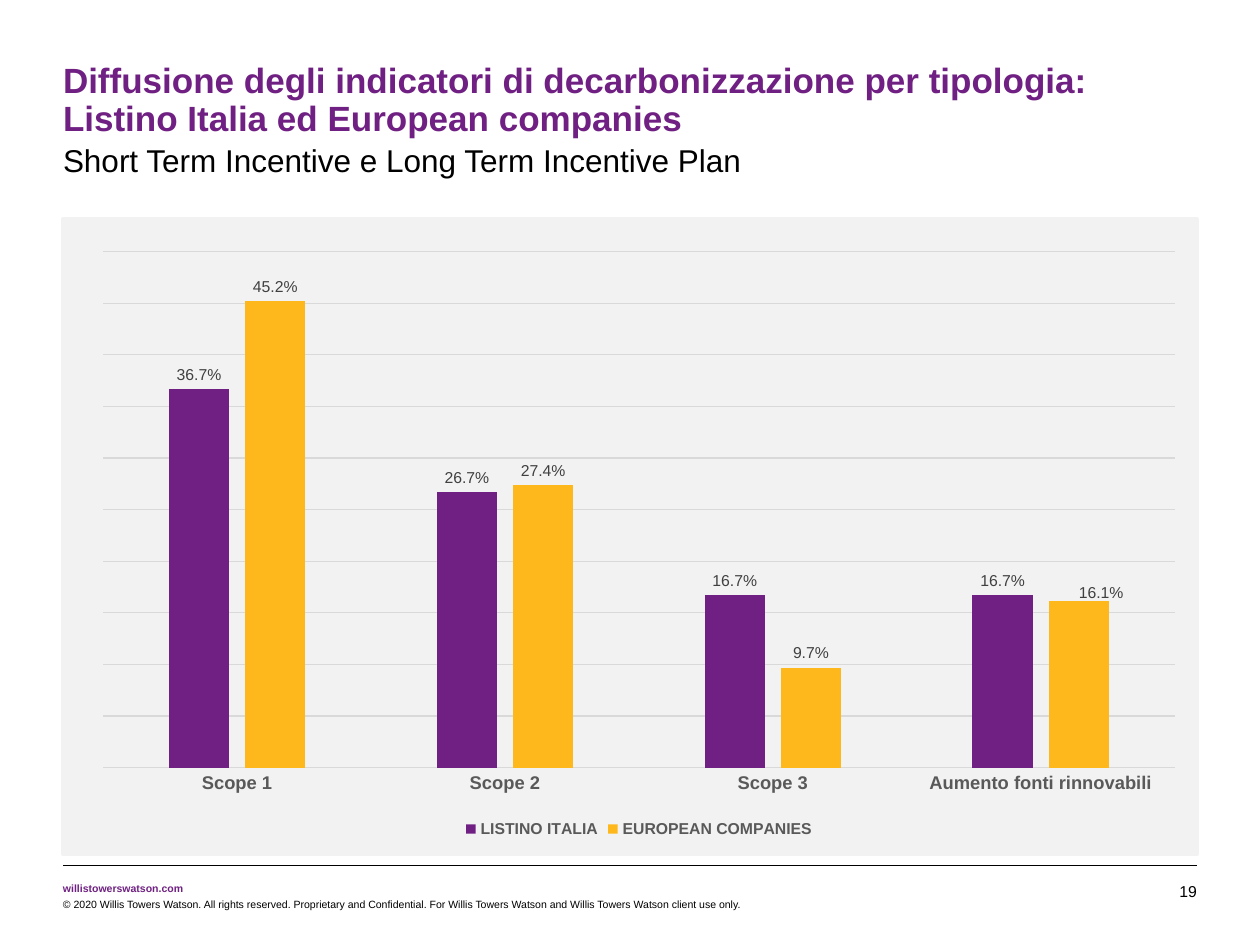
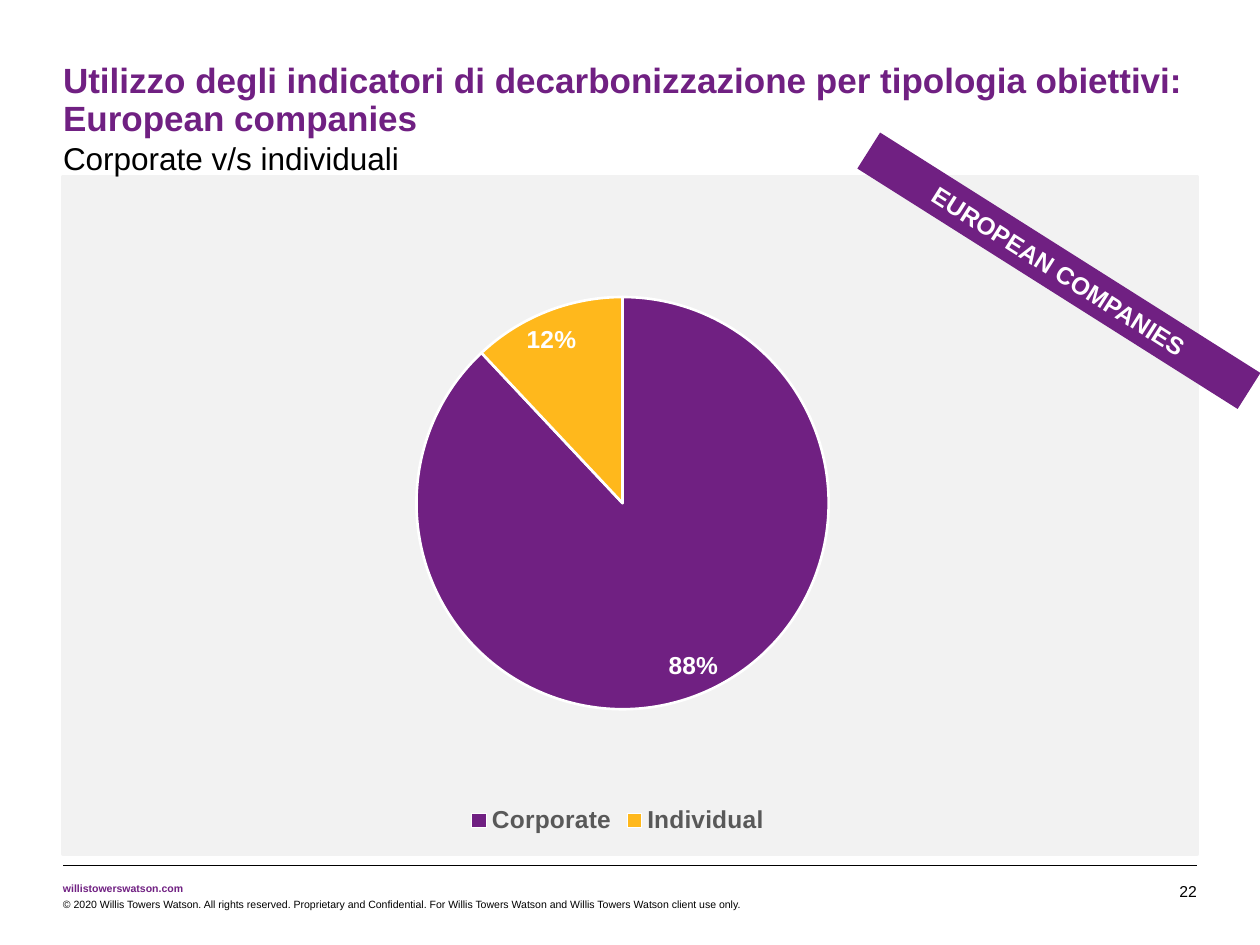
"""Builds two slides on decarbonisation indicators in incentive plans."""
from pptx import Presentation
from pptx.chart.data import CategoryChartData
from pptx.dml.color import RGBColor
from pptx.enum.chart import XL_CHART_TYPE, XL_LABEL_POSITION, XL_LEGEND_POSITION, XL_TICK_MARK
from pptx.enum.shapes import MSO_CONNECTOR, MSO_SHAPE
from pptx.enum.text import MSO_ANCHOR, MSO_AUTO_SIZE, PP_ALIGN
from pptx.oxml import parse_xml
from pptx.oxml.ns import nsdecls
from pptx.oxml.xmlchemy import OxmlElement
from pptx.util import Cm, Pt

COLUMNS, PIE = XL_CHART_TYPE.COLUMN_CLUSTERED, XL_CHART_TYPE.PIE
OUTSIDE_END, BEST_FIT = XL_LABEL_POSITION.OUTSIDE_END, XL_LABEL_POSITION.BEST_FIT
BOTTOM_LEGEND, NO_TICK = XL_LEGEND_POSITION.BOTTOM, XL_TICK_MARK.NONE
STRAIGHT, RECTANGLE = MSO_CONNECTOR.STRAIGHT, MSO_SHAPE.RECTANGLE
TOP, MIDDLE, BOTTOM = MSO_ANCHOR.TOP, MSO_ANCHOR.MIDDLE, MSO_ANCHOR.BOTTOM
LEFT, CENTER, RIGHT = PP_ALIGN.LEFT, PP_ALIGN.CENTER, PP_ALIGN.RIGHT
NO_AUTOFIT = MSO_AUTO_SIZE.NONE

FONT = "Arial"
COLORS = {
    "purple": "702082", "yellow": "FFB81C", "black": "000000", "white": "FFFFFF",
    "panel": "F2F2F2", "grid": "D9D9D9", "axis": "595959", "label": "404040",
}
MARGIN, CONTENT_WIDTH = 1.27, 22.86
SITE = "willistowerswatson.com"
COPYRIGHT = ("© 2020 Willis Towers Watson. All rights reserved. Proprietary and Confidential. "
             "For Willis Towers Watson and Willis Towers Watson client use only.")


def rgb(name):
    """Return a palette colour."""
    return RGBColor.from_string(COLORS[name])


def style_font(font, size, color, bold=False):
    """Set typeface, size, colour and weight."""
    font.name, font.size, font.bold = FONT, Pt(size), bold
    font.color.rgb = rgb(color)


def paint(part, color):
    """Fill a shape or chart part with a solid colour."""
    part.fill.solid()
    part.fill.fore_color.rgb = rgb(color)


def outline(line, color, width):
    """Draw a solid line."""
    line.color.rgb = rgb(color)
    line.width = Pt(width)


def place(shape, left, top, width, height):
    """Move and size a shape, in centimetres."""
    shape.left, shape.top = Cm(left), Cm(top)
    shape.width, shape.height = Cm(width), Cm(height)


def write(shape, text, size, color, bold=False, align=LEFT, anchor=TOP, wrap=True):
    """Write one formatted paragraph without insets and return it."""
    frame = shape.text_frame
    frame.text = text
    frame.word_wrap, frame.auto_size, frame.vertical_anchor = wrap, NO_AUTOFIT, anchor
    frame.margin_left = frame.margin_right = frame.margin_top = frame.margin_bottom = 0
    paragraph = frame.paragraphs[0]
    paragraph.alignment, paragraph.space_before = align, Pt(0)
    for run in paragraph.runs:
        style_font(run.font, size, color, bold)
    return paragraph


def add_label(slide, box, text, size, color, **options):
    """Add a small text box."""
    write(slide.shapes.add_textbox(*map(Cm, box)), text, size, color, **options)


def add_rectangle(slide, box, color):
    """Add a plain filled rectangle."""
    rectangle = slide.shapes.add_shape(RECTANGLE, *map(Cm, box))
    rectangle.shadow.inherit = False
    paint(rectangle, color)
    rectangle.line.fill.background()
    return rectangle


def add_footer(slide, page):
    """Add the rule, site, copyright and page number."""
    rule = slide.shapes.add_connector(
        STRAIGHT, Cm(MARGIN), Cm(17.45), Cm(MARGIN + CONTENT_WIDTH), Cm(17.45))
    outline(rule.line, "black", 0.25)
    rule.element.spPr.append(OxmlElement("a:effectLst"))
    add_label(slide, (MARGIN, 17.78, 2.44, 0.25), SITE, 6, "purple", bold=True, wrap=False)
    add_label(slide, (MARGIN, 18.1, 14.66, 0.25), COPYRIGHT, 6, "black")
    add_label(slide, (23.06, 17.78, 1.07, 0.38), page, 9, "black", align=RIGHT, anchor=BOTTOM)


def add_page(deck, title, subtitle, subtitle_top, panel_top, page):
    """Add a slide with headings, grey panel and footer."""
    slide = deck.slides.add_slide(deck.slide_layouts[1])
    heading, subheading = slide.shapes.title, slide.placeholders[1]
    place(heading, MARGIN, 1.27, CONTENT_WIDTH, 1.57)
    write(heading, title, 20, "purple", bold=True).line_spacing = 0.9

    place(subheading, MARGIN, subtitle_top, CONTENT_WIDTH, 0.76)
    properties = write(subheading, subtitle, 18, "black")._p.get_or_add_pPr()
    properties.set("marL", "0")
    properties.set("indent", "0")
    properties.append(OxmlElement("a:buNone"))

    panel = add_rectangle(slide, (MARGIN, panel_top, CONTENT_WIDTH, 17.22 - panel_top), "panel")
    outline(panel.line, "panel", 2)
    panel.element.getparent().insert(2, panel.element)
    add_footer(slide, page)
    return slide


def add_chart(slide, kind, box, categories, series, number_format, legend_size):
    """Add a chart with a bottom legend."""
    data = CategoryChartData(number_format=number_format)
    data.categories = categories
    for name, values in series.items():
        data.add_series(name, values)
    chart = slide.shapes.add_chart(kind, *map(Cm, box), data).chart
    style_font(chart.font, 10, "black")
    chart.has_title, chart.has_legend = False, True
    chart.legend.position, chart.legend.include_in_layout = BOTTOM_LEGEND, False
    style_font(chart.legend.font, legend_size, "axis", True)
    return chart


def show_values(series, number_format, position, size, color, bold=False):
    """Show the values of a series as labels."""
    labels = series.data_labels
    labels.show_value = True
    labels.number_format, labels.number_format_is_linked = number_format, False
    labels.position = position
    style_font(labels.font, size, color, bold)


def manual_layout(**settings):
    """Return a chart layout element with the given settings."""
    entries = "".join(f'<c:{key} val="{value}"/>' for key, value in settings.items())
    return parse_xml(f'<c:layout {nsdecls("c")}><c:manualLayout>{entries}'
                     '</c:manualLayout></c:layout>')


def shift_label(series, index, x, y):
    """Offset one value label by fractions of the chart size."""
    label = series.points[index].data_label
    style_font(label.font, 9, "label")
    label.position = OUTSIDE_END
    series.data_labels._element.find("{*}dLbl").insert(1, manual_layout(x=x, y=y))


def add_scope_columns(slide):
    """Add the comparison of indicators by scope."""
    chart = add_chart(
        slide, COLUMNS, (1.63, 4.83, 22.5, 12.17),
        ["Scope 1", "Scope 2", "Scope 3", "Aumento fonti rinnovabili"],
        {"LISTINO ITALIA": (0.367, 0.267, 0.167, 0.167),
         "EUROPEAN COMPANIES": (0.452, 0.274, 0.097, 0.161)}, "0.0%", 9)
    plot = chart.plots[0]
    plot.gap_width, plot.overlap, plot.vary_by_categories = 219, -27, False
    for series, color in zip(plot.series, ("purple", "yellow")):
        paint(series.format, color)
        show_values(series, "0.0%", OUTSIDE_END, 9, "label")
    shift_label(plot.series[1], 3, 0.02, 0.01)

    scopes, shares = chart.category_axis, chart.value_axis
    scopes.major_tick_mark = NO_TICK
    style_font(scopes.tick_labels.font, 10.5, "axis", True)
    outline(scopes.format.line, "grid", 0.75)
    shares.minimum_scale, shares.maximum_scale, shares.major_unit = 0, 0.5, 0.05
    shares.visible, shares.has_major_gridlines = False, True
    outline(shares.major_gridlines.format.line, "grid", 0.75)


def add_goal_pie(slide):
    """Add the split between corporate and individual goals."""
    chart = add_chart(slide, PIE, (2.79, 3.89, 19.33, 13.03), ["Corporate", "Individual"],
                      {"Series 1": (0.88, 0.12)}, "0%", 14)
    plot = chart.plots[0]
    plot.vary_by_categories = True
    goals = plot.series[0]
    for index, color in enumerate(("purple", "yellow")):
        slice_format = goals.points[index].format
        paint(slice_format, color)
        outline(slice_format.line, "white", 1.5)
    show_values(goals, "0%", BEST_FIT, 14, "white", True)
    area = chart.element.chart.plotArea
    for layout in area.findall("{*}layout"):
        area.remove(layout)
    area.insert(0, manual_layout(layoutTarget="inner", xMode="edge", yMode="edge",
                                 x=0.29, y=0.11, w=0.43, h=0.74))


def add_ribbon(slide, text):
    """Add the slanted ribbon across the corner."""
    ribbon = add_rectangle(slide, (16.81, 5.03, 9.07, 0.86), "purple")
    ribbon.rotation = 32.3
    write(ribbon, text, 14, "white", bold=True, align=CENTER, anchor=MIDDLE)


def main():
    """Build and save the deck."""
    deck = Presentation()
    deck.slide_width, deck.slide_height = Cm(25.4), Cm(19.05)

    by_scope = add_page(
        deck, "Diffusione degli indicatori di decarbonizzazione per tipologia:\v"
        "Listino Italia ed European companies",
        "Short Term Incentive e Long Term Incentive Plan", 2.84, 4.42, "19")
    add_scope_columns(by_scope)

    by_goal = add_page(
        deck, "Utilizzo degli indicatori di decarbonizzazione per tipologia obiettivi: "
        "European companies", "Corporate v/s individuali", 2.8, 3.56, "22")
    add_ribbon(by_goal, "EUROPEAN COMPANIES")
    add_goal_pie(by_goal)

    deck.save("out.pptx")


if __name__ == "__main__":
    main()
